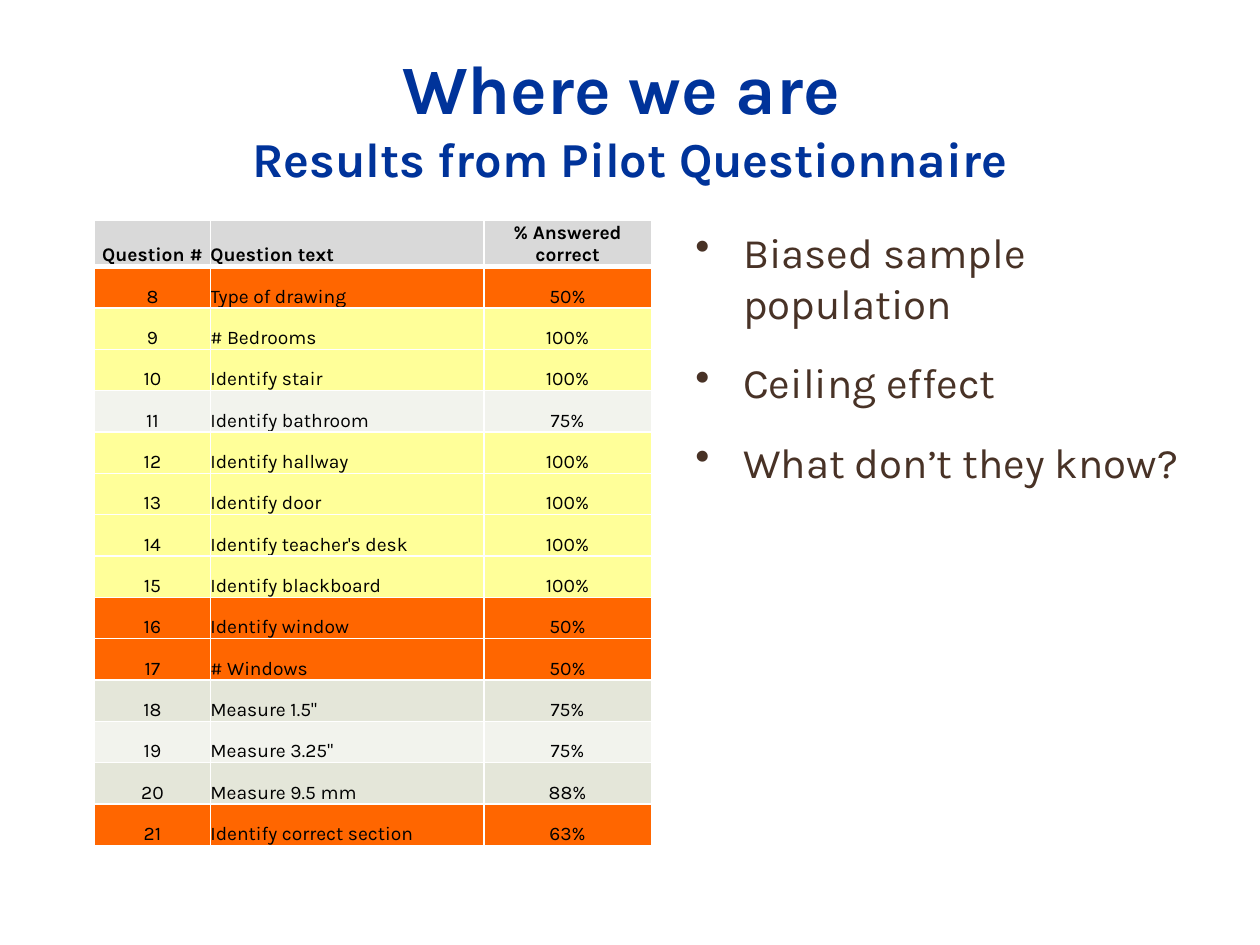
import dataclasses

import pptx
import pptx.dml.color
import pptx.enum.text
import pptx.oxml
import pptx.oxml.ns
import pptx.slide
import pptx.table
import pptx.text.text
import pptx.util

Inches = pptx.util.Inches
Pt = pptx.util.Pt
RGBColor = pptx.dml.color.RGBColor
ALIGN = pptx.enum.text.PP_ALIGN
ANCHOR = pptx.enum.text.MSO_ANCHOR

SLIDE_W, SLIDE_H = 10, 7.5
FONT = "Karla"
BLUE = RGBColor(0x00, 0x33, 0x9A)
BROWN = RGBColor(0x48, 0x32, 0x26)
BLACK = RGBColor(0x00, 0x00, 0x00)
WHITE = RGBColor(0xFF, 0xFF, 0xFF)
GREY = RGBColor(0xD9, 0xD9, 0xD9)
ORANGE = RGBColor(0xFF, 0x66, 0x00)
YELLOW = RGBColor(0xFF, 0xFF, 0x99)
BAND_DARK = RGBColor(0xE4, 0xE6, 0xD9)
BAND_LIGHT = RGBColor(0xF2, 0xF3, 0xED)

HEADINGS = ("Question #", "Question text", "% Answered correct")
COLUMN_WIDTHS = (0.92, 2.17, 1.33)
COLUMN_ALIGNS = (ALIGN.CENTER, ALIGN.LEFT, ALIGN.CENTER)
TABLE_H = 4.92
FIRST_QUESTION = 8
BULLETS = ("Biased sample population", "Ceiling effect", "What don’t they know?")


@dataclasses.dataclass(frozen=True)
class Box:
    """A rectangle in shares of the slide's width and height."""
    left: float
    top: float
    width: float
    height: float

    def emu(self) -> tuple[int, int, int, int]:
        return (Inches(self.left * SLIDE_W), Inches(self.top * SLIDE_H),
                Inches(self.width * SLIDE_W), Inches(self.height * SLIDE_H))


@dataclasses.dataclass(frozen=True)
class Question:
    number: int
    text: str
    percent: int

    def color(self) -> RGBColor:
        """Yellow for all correct, orange for weak, bands in between."""
        if self.percent == 100:
            return YELLOW
        if self.percent < 75:
            return ORANGE
        return BAND_LIGHT if self.number % 2 else BAND_DARK


RESULTS = (
    ("Type of drawing", 50),
    ("# Bedrooms", 100),
    ("Identify stair", 100),
    ("Identify bathroom", 75),
    ("Identify hallway", 100),
    ("Identify door", 100),
    ("Identify teacher's desk", 100),
    ("Identify blackboard", 100),
    ("Identify window", 50),
    ("# Windows", 50),
    ("Measure 1.5\"", 75),
    ("Measure 3.25\"", 75),
    ("Measure 9.5 mm", 88),
    ("Identify correct section", 63),
)
QUESTIONS = [Question(n, *result) for n, result in enumerate(RESULTS, FIRST_QUESTION)]

TITLE_BOX = Box(0.05, 0.04, 0.9, 1 / 6)
BODY_BOX = Box(0.542, 0.7 / 3, 0.442, 0.66)
TABLE_BOX = Box(0.075, 0.7 / 3, sum(COLUMN_WIDTHS) / SLIDE_W, TABLE_H / SLIDE_H)


def set_font(font: pptx.text.text.Font, size: float, color: RGBColor,
             bold: bool = False) -> None:
    for name, value in {"name": FONT, "size": Pt(size), "bold": bold}.items():
        setattr(font, name, value)
    font.color.rgb = color


def add_text_frame(s: pptx.slide.Slide, box: Box,
                   anchor: ANCHOR) -> pptx.text.text.TextFrame:
    tf = s.shapes.add_textbox(*box.emu()).text_frame
    tf.word_wrap = True
    tf.vertical_anchor = anchor
    return tf


def add_title(s: pptx.slide.Slide) -> None:
    p = add_text_frame(s, TITLE_BOX, ANCHOR.MIDDLE).paragraphs[0]
    p.alignment = ALIGN.CENTER
    r = p.add_run()
    r.text = "Where we are "
    set_font(r.font, 39.6, BLUE, True)
    p.add_line_break()
    r = p.add_run()
    r.text = "Results from Pilot Questionnaire"
    set_font(r.font, 27.9, BLUE, True)


def add_bullets(s: pptx.slide.Slide) -> None:
    tf = add_text_frame(s, BODY_BOX, ANCHOR.TOP)
    for i, text in enumerate(BULLETS):
        p = tf.add_paragraph() if i else tf.paragraphs[0]
        p.space_after = Pt(12)
        if i:
            p.space_before = Pt(4.8)
        pPr = p._p.get_or_add_pPr()
        pPr.set("marL", str(Inches(0.38)))
        pPr.set("indent", str(-Inches(0.38)))
        bullet = pptx.oxml.parse_xml(
            f'<a:buChar {pptx.oxml.ns.nsdecls("a")} char="•"/>')
        pPr.append(bullet)
        r = p.add_run()
        r.text = text
        set_font(r.font, 24, BROWN)


def set_borders(cell: pptx.table._Cell, bottom: float) -> None:
    tcPr = cell._tc.get_or_add_tcPr()
    widths = {"lnL": 1, "lnR": 1, "lnT": 1, "lnB": bottom}
    for i, (tag, width) in enumerate(widths.items()):
        tcPr.insert(i, pptx.oxml.parse_xml(
            f'<a:{tag} {pptx.oxml.ns.nsdecls("a")} w="{Pt(width)}"><a:solidFill>'
            f'<a:srgbClr val="{WHITE}"/></a:solidFill></a:{tag}>'))


def fill_row(table: pptx.table.Table, row: int, texts: tuple[str, ...],
             color: RGBColor) -> None:
    header = row == 0
    for col, (text, align) in enumerate(zip(texts, COLUMN_ALIGNS)):
        cell = table.cell(row, col)
        for side in ("left", "right", "top", "bottom"):
            setattr(cell, f"margin_{side}", 0)
        cell.vertical_anchor = ANCHOR.BOTTOM
        cell.fill.solid()
        cell.fill.fore_color.rgb = color
        # Neighbouring cells share an edge, so row 1 repeats the header's rule.
        set_borders(cell, 3 if header else 1)
        p = cell.text_frame.paragraphs[0]
        p.alignment = align
        r = p.add_run()
        r.text = text
        set_font(r.font, 11, BLACK, header)


def add_results_table(s: pptx.slide.Slide) -> None:
    rows = len(QUESTIONS) + 1
    table = s.shapes.add_table(rows, len(HEADINGS), *TABLE_BOX.emu()).table
    for column, width in zip(table.columns, COLUMN_WIDTHS):
        column.width = Inches(width)
    for row in table.rows:
        row.height = Inches(TABLE_H / rows)
    fill_row(table, 0, HEADINGS, GREY)
    for i, q in enumerate(QUESTIONS, 1):
        fill_row(table, i, (str(q.number), q.text, f"{q.percent}%"), q.color())


def main() -> None:
    prs = pptx.Presentation()
    prs.slide_width, prs.slide_height = Inches(SLIDE_W), Inches(SLIDE_H)
    s = prs.slides.add_slide(prs.slide_layouts[6])
    add_title(s)
    add_bullets(s)
    add_results_table(s)
    prs.save("out.pptx")


if __name__ == "__main__":
    main()
